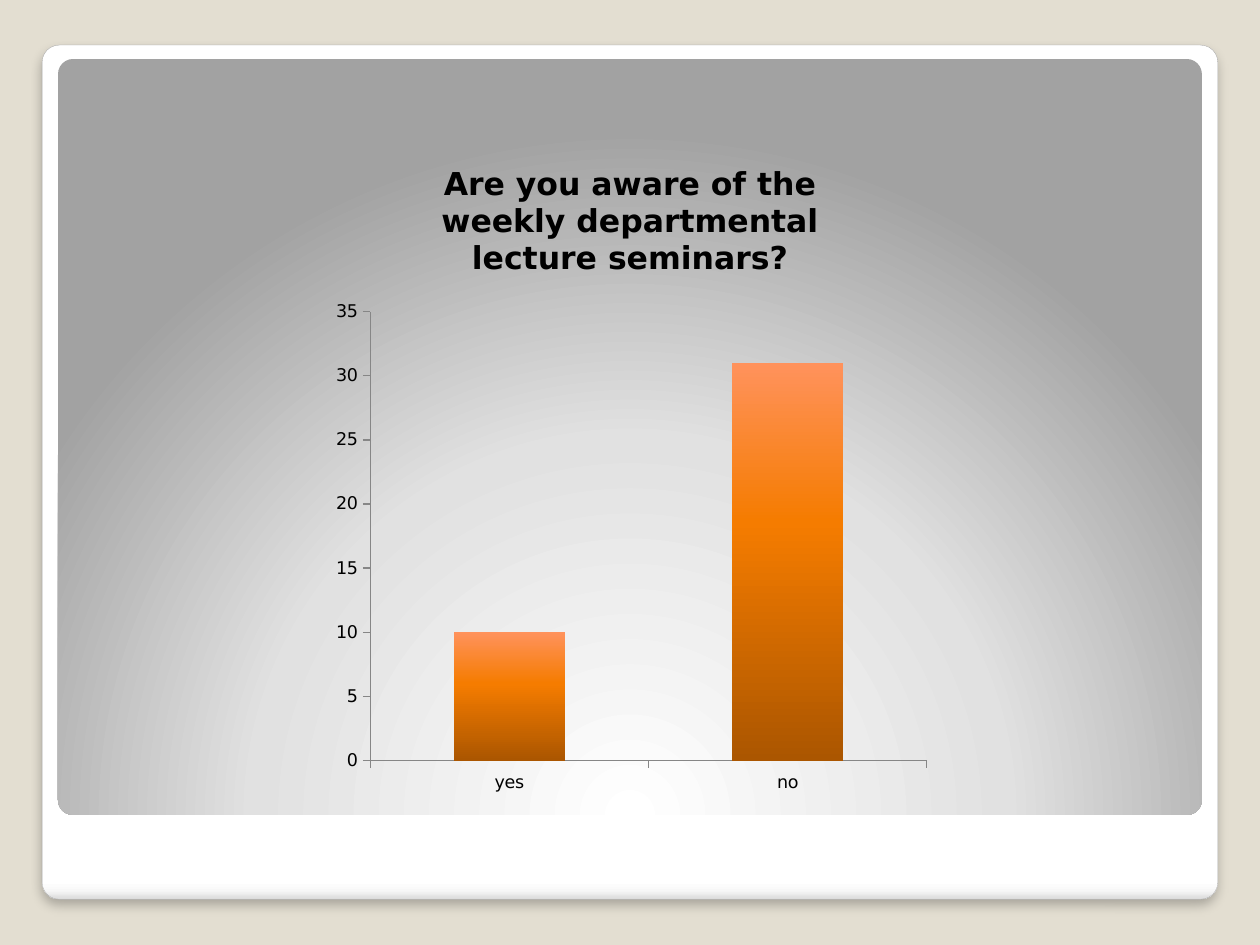
from pptx import Presentation
from pptx import util as u
from pptx.chart import data as cd
from pptx.dml.color import RGBColor
from pptx.enum import chart as ch, shapes as sh
from pptx.oxml import parse_xml
from pptx.oxml.ns import nsdecls, qn

HUES = {
    "back": "E3DED1", "white": "FFFFFF", "pale": "F7F7F7", "edge": "DADADA",
    "rim": "A4A4A4", "mist": "E1E1E1", "grey": "A2A2A2", "ink": "000000",
    "axis": "868686", "peach": "FF925C", "amber": "F57C00", "rust": "AB5600",
}
FONT = "DejaVu Sans"
WIDE, HIGH = u.Cm(25.4), u.Cm(19.05)
DOWN = '<a:lin ang="5400000" scaled="0"/>'
GLOW = ('<a:path path="circle">'
        '<a:fillToRect l="50000" t="175000" r="50000" b="-75000"/></a:path>')


def hue(name):
    return RGBColor.from_string(HUES[name])


def blend(fill, root, stops, way):
    fill.gradient()
    old = next(root.iter(qn("a:gradFill")))
    marks = "".join(
        f'<a:gs pos="{pos * 1000}"><a:srgbClr val="{HUES[name]}"/></a:gs>'
        for pos, name in stops)
    new = parse_xml(f'<a:gradFill {nsdecls("a")} rotWithShape="1">'
                    f'<a:gsLst>{marks}</a:gsLst>{way}</a:gradFill>')
    old.getparent().replace(old, new)


def add_panel(slide, top, wide, high, stops, way):
    panel = slide.shapes.add_shape(
        sh.MSO_SHAPE.ROUNDED_RECTANGLE,
        (WIDE - wide) // 2, top, wide, high)
    panel.adjustments[0] = 0.02
    panel.shadow.inherit = False
    panel.line.fill.background()
    blend(panel.fill, panel._element.spPr, stops, way)
    return panel


def add_shade(panel):
    panel.line.color.rgb = hue("rim")
    panel.line.width = u.Pt(0.16)
    shade = parse_xml(
        f'<a:outerShdw {nsdecls("a")} blurRad="{u.Pt(6)}" dist="{u.Pt(4)}" '
        f'dir="5400000" algn="tl" rotWithShape="0">'
        f'<a:srgbClr val="{HUES["ink"]}"><a:alpha val="25000"/></a:srgbClr>'
        f'</a:outerShdw>')
    panel._element.spPr.find(qn("a:effectLst")).append(shade)


def style_font(font, size, bold=False):
    font.name = FONT
    font.size = u.Pt(size)
    font.bold = bold
    font.color.rgb = hue("ink")


def style_axis(axis):
    axis.has_major_gridlines = False
    axis.major_tick_mark = ch.XL_TICK_MARK.OUTSIDE
    axis.minor_tick_mark = ch.XL_TICK_MARK.NONE
    axis.format.line.color.rgb = hue("axis")
    axis.format.line.width = u.Pt(0.75)
    style_font(axis.tick_labels.font, 10)


def set_plot(chart, left, top, wide, high):
    area = chart._chartSpace.chart.plotArea
    for old in area.findall(qn("c:layout")):
        area.remove(old)
    sizes = "".join(f'<c:{key} val="{val}"/>' for key, val in
                    zip("xywh", (left, top, wide, high)))
    area.insert(0, parse_xml(
        f'<c:layout {nsdecls("c")}><c:manualLayout>'
        f'<c:layoutTarget val="inner"/><c:xMode val="edge"/>'
        f'<c:yMode val="edge"/>{sizes}</c:manualLayout></c:layout>'))


def add_bars(slide, title, cats, vals):
    data = cd.CategoryChartData()
    data.categories = cats
    data.add_series("Series 1", vals)
    wide = u.Cm(12.47)
    chart = slide.shapes.add_chart(
        ch.XL_CHART_TYPE.COLUMN_STACKED, (WIDE - wide) // 2, u.Cm(2.77),
        wide, u.Cm(13.51), data).chart
    style_font(chart.font, 10)
    chart.has_legend = False
    chart.has_title = True
    run = chart.chart_title.text_frame.paragraphs[0].add_run()
    run.text = title
    style_font(run.font, 18, True)
    chart.chart_title.include_in_layout = False
    for axis in (chart.category_axis, chart.value_axis):
        style_axis(axis)
    chart.value_axis.minimum_scale = 0
    chart.value_axis.maximum_scale = 35
    chart.value_axis.major_unit = 5
    plot = chart.plots[0]
    plot.gap_width = 150
    plot.overlap = 100
    plot.vary_by_categories = False
    bars = plot.series[0]
    blend(bars.format.fill, bars._element,
          [(0, "peach"), (40, "amber"), (100, "rust")], DOWN)
    set_plot(chart, 0.08, 0.26, 0.9, 0.67)


def main():
    deck = Presentation()
    deck.slide_width, deck.slide_height = WIDE, HIGH
    slide = deck.slides.add_slide(deck.slide_layouts[6])
    slide.background.fill.solid()
    slide.background.fill.fore_color.rgb = hue("back")
    frame = add_panel(
        slide, u.Cm(0.91), u.Cm(23.7), u.Cm(17.22),
        [(0, "white"), (98, "white"), (99, "pale"), (100, "edge")], DOWN)
    add_shade(frame)
    add_panel(slide, u.Cm(1.19), u.Cm(23.06), u.Cm(15.24),
              [(0, "white"), (55, "mist"), (100, "grey")], GLOW)
    add_bars(slide,
             "Are you aware of the weekly departmental lecture seminars?",
             ["yes", "no"], [10, 31])
    deck.save("out.pptx")


if __name__ == "__main__":
    main()
